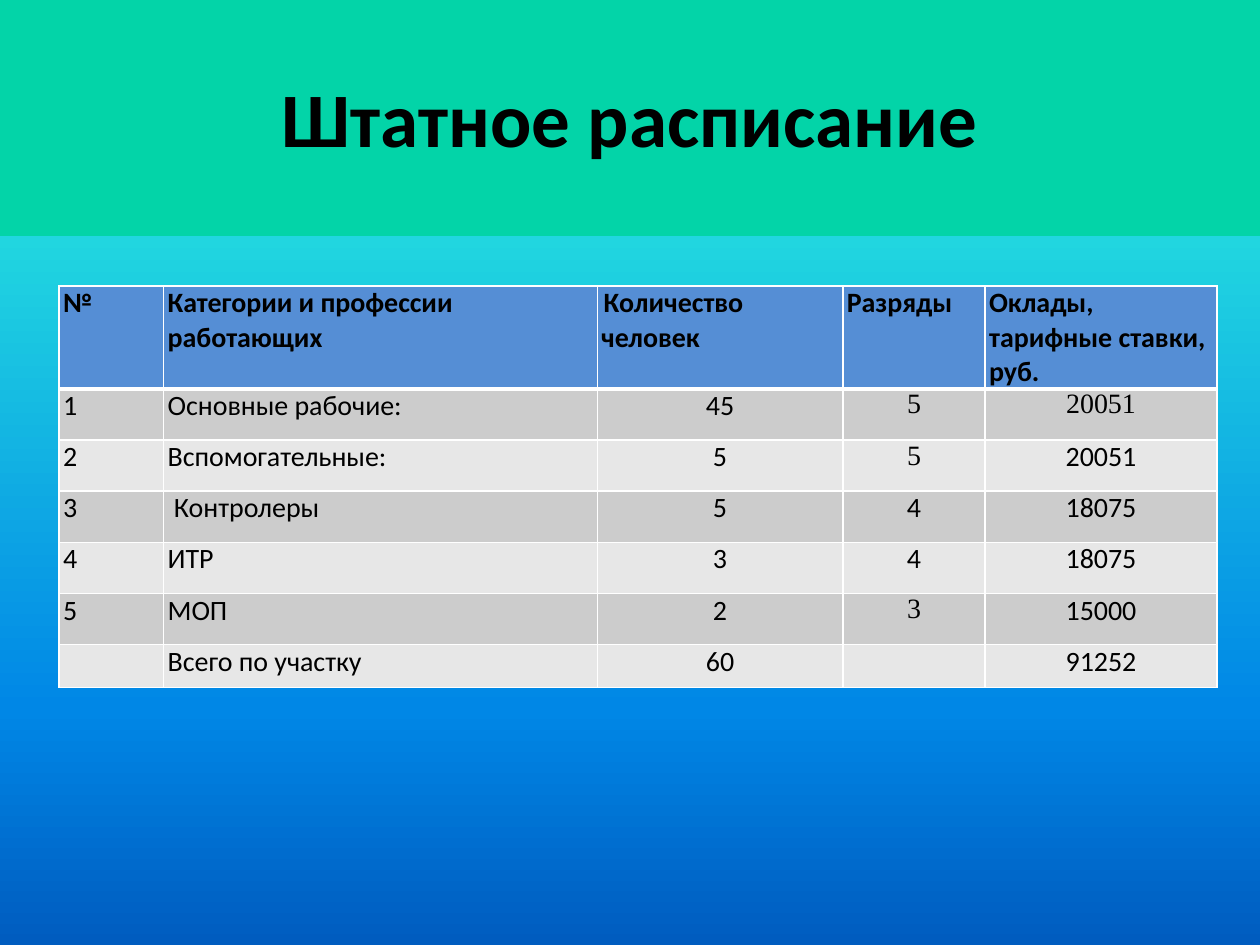
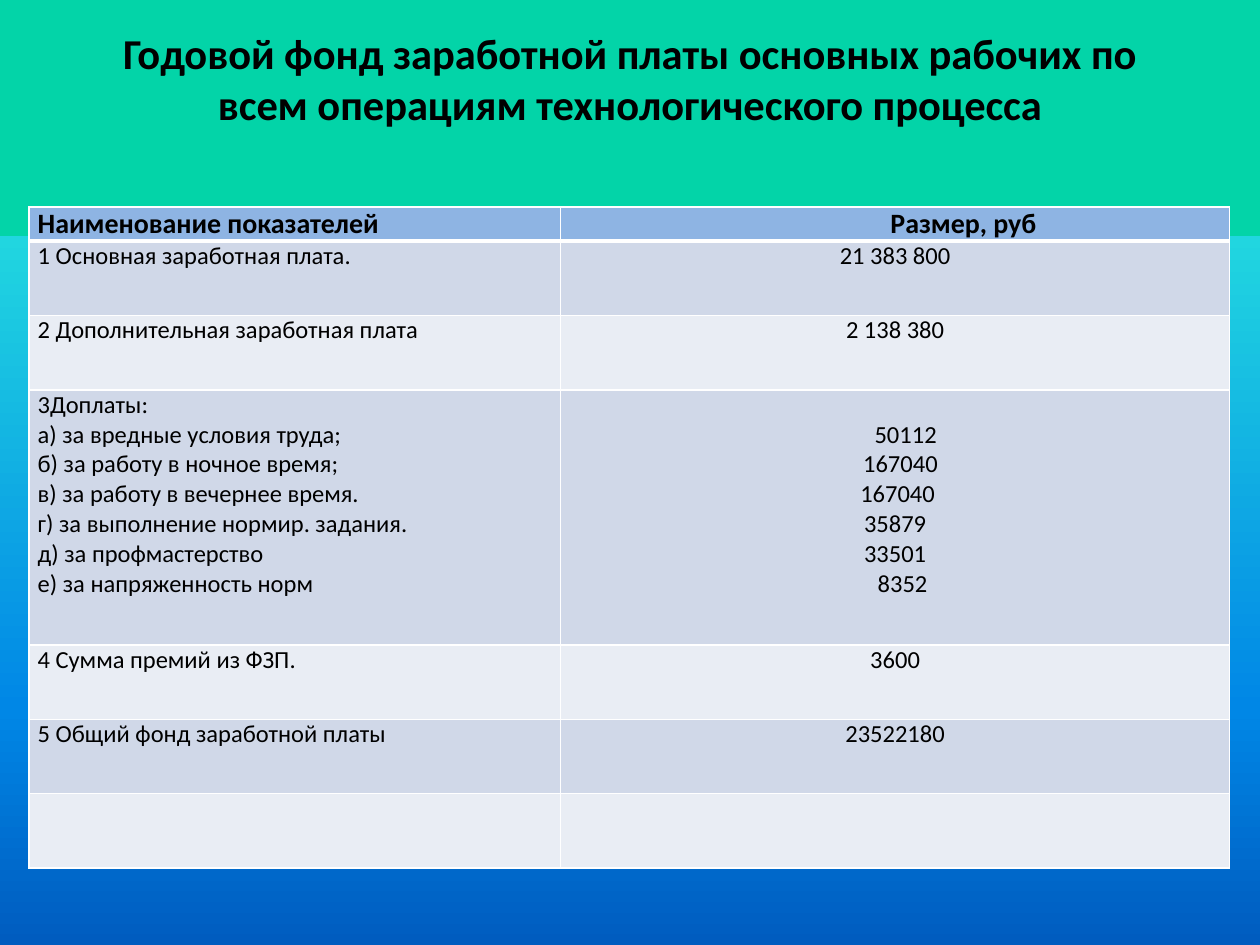
from lxml import etree
from pptx import Presentation
from pptx import util as u
from pptx.dml.color import RGBColor
from pptx.enum import text
from pptx.oxml.ns import qn

COLORS = {
    "text": "000000", "border": "FFFFFF",
    "band": "03D4A8", "sky": "21D6E0", "blue": "0087E6", "deep": "005CBF",
    "staff_head": "558ED5", "staff_odd": "CCCCCC", "staff_even": "E7E7E7",
    "pay_head": "8EB4E3", "pay_odd": "D0D8E8", "pay_even": "E9EDF4",
}
GRADIENT = [(25, "band"), (25, "sky"), (75, "blue"), (100, "deep")]
LEFT, CENTER = text.PP_ALIGN.LEFT, text.PP_ALIGN.CENTER


def format_font(font, size, bold, name="Calibri"):
    for key, value in {"size": u.Pt(size), "bold": bold, "name": name}.items():
        setattr(font, key, value)
    font.color.rgb = RGBColor.from_string(COLORS["text"])


def add_slide_with_table(title, title_size, title_inset, table):
    """Add a slide; table gives rows, place, sizes, insets and exceptions by cell."""
    s = prs.slides.add_slide(prs.slide_layouts[5])
    sp = s.shapes.title
    place = {"left": 1.27, "top": 0.76, "width": 22.86, "height": 3.18}
    for key, value in place.items():
        setattr(sp, key, u.Cm(value))
    tf = sp.text_frame
    tf.text = title
    frame = {"auto_size": text.MSO_AUTO_SIZE.NONE, "word_wrap": True,
             "vertical_anchor": text.MSO_ANCHOR.MIDDLE,
             "margin_top": 0, "margin_bottom": u.Cm(title_inset)}
    for key, value in frame.items():
        setattr(tf, key, value)
    p = tf.paragraphs[0]
    p.alignment = CENTER
    format_font(p.runs[0].font, title_size, True)

    widths, heights = table["widths"], table["heights"]
    tbl = s.shapes.add_table(
        len(heights), len(widths), u.Cm(table["left"]), u.Cm(table["top"]),
        u.Cm(sum(widths)), u.Cm(sum(heights))).table
    for col, width in zip(tbl.columns, widths):
        col.width = u.Cm(width)
    for i, (row, height) in enumerate(zip(tbl.rows, heights)):
        row.height = u.Cm(height)
        kind = "head" if i == 0 else "odd" if i % 2 else "even"
        for j, cell in enumerate(row.cells):
            cell.text = table["rows"][i][j]
            cell.margin_left = cell.margin_right = u.Cm(table["inset"])
            cell.margin_top = u.Cm(table["top_insets"].get((i, j), 0))
            cell.margin_bottom = 0
            cell.fill.solid()
            cell.fill.fore_color.rgb = RGBColor.from_string(
                COLORS[f"{table['palette']}_{kind}"])

            tcPr = cell._tc.get_or_add_tcPr()
            thick = {"lnB": i == 0, "lnT": i == 1}
            for n, side in enumerate(("lnL", "lnR", "lnT", "lnB")):
                width = u.Pt(3 if thick.get(side) else 1)
                ln = etree.Element(qn(f"a:{side}"), w=str(width))
                solid = etree.SubElement(ln, qn("a:solidFill"))
                etree.SubElement(solid, qn("a:srgbClr"), val=COLORS["border"])
                tcPr.insert(n, ln)

            for k, p in enumerate(cell.text_frame.paragraphs):
                left = i == 0 or j < table["left_columns"] or (i, j, k) in table["left_lines"]
                p.alignment = LEFT if left else CENTER
                for attr, value in table["indents"].get((i, j, k), {}).items():
                    p._p.get_or_add_pPr().set(attr, str(u.Cm(value)))
                name = "Times New Roman" if (i, j) in table["serif"] else "Calibri"
                size = 16 if i == 0 else table["body_size"]
                format_font(p.font, size, i == 0, name)
                for r in p.runs:
                    format_font(r.font, size, i == 0, name)


prs = Presentation()
prs.slide_width, prs.slide_height = u.Cm(25.4), u.Cm(19.05)

# Shared background: a hard-edged title band above a blue gradient
master = prs.slide_master
fill = master.background.fill
fill.gradient()
fill.gradient_angle = 270
stops = master.element.find(".//" + qn("a:gsLst"))
for gs in list(stops):
    stops.remove(gs)
for percent, color in GRADIENT:
    gs = etree.SubElement(stops, qn("a:gs"), pos=str(percent * 1000))
    etree.SubElement(gs, qn("a:srgbClr"), val=COLORS[color])

# Slide 1: staff list
staff = {
    "rows": [
        ["№", "Категории и профессии работающих", "Количество человек",
         "Разряды", "Оклады, тарифные ставки, руб."],
        ["1", "Основные рабочие:", "45", "5", "20051"],
        ["2", "Вспомогательные:", "5", "5", "20051"],
        ["3", " Контролеры", "5", "4", "18075"],
        ["4", "ИТР", "3", "4", "18075"],
        ["5", "МОП", "2", "3", "15000"],
        ["", "Всего по участку", "60", "", "91252"],
    ],
    "left": 1.19, "top": 5.77, "inset": 0.08, "palette": "staff", "body_size": 16,
    "widths": [2.11, 8.74, 4.95, 2.87, 4.67],
    "heights": [2.07] + [1.03] * 5 + [0.87],
    "left_columns": 2, "left_lines": set(), "top_insets": {},
    "indents": {(0, 2, 0): {"marL": 0, "indent": 0.05}},
    "serif": {(1, 3), (1, 4), (2, 3), (5, 3)},
}
add_slide_with_table("Штатное расписание", 44, 0, staff)

# Slide 2: yearly wage fund
extras = ["3Доплаты:", "а) за вредные условия труда;", "б) за работу в ночное время;",
          "в) за работу в вечернее время.", "г) за выполнение нормир. задания.",
          "д) за профмастерство", "е) за напряженность норм"]
extra_sums = ["50112", "167040", "167040", "35879", "33501", "8352"]
wages = {
    "rows": [
        ["Наименование показателей", "Размер, руб"],
        ["1 Основная заработная плата.", "21 383 800"],
        ["2 Дополнительная заработная плата", "2 138 380"],
        ["\n".join(extras), "\n".join(extra_sums)],
        ["4 Сумма премий из ФЗП.", "3600"],
        ["5 Общий фонд заработной платы", "23522180"],
        ["", ""],
    ],
    "left": 0.58, "top": 4.17, "inset": 0.18, "palette": "pay", "body_size": 14,
    "widths": [10.72, 13.49],
    "heights": [0.69, 1.5, 1.5, 5.14, 1.5, 1.5, 1.5],
    "left_columns": 1, "left_lines": {(3, 1, 0), (3, 1, 1)},
    "top_insets": {(3, 1): 0.6},
    "indents": {(0, 1, 0): {"marL": 6.47}, (3, 1, 0): {"marL": 6.15},
                (3, 1, 1): {"marL": 5.92}, (3, 1, 2): {"marL": 0.1},
                (3, 1, 5): {"marL": 0.3}},
    "serif": set(),
}
add_slide_with_table(
    "Годовой фонд заработной платы основных рабочих по всем операциям "
    "технологического процесса", 24.3, 1.55, wages)

prs.save("out.pptx")
